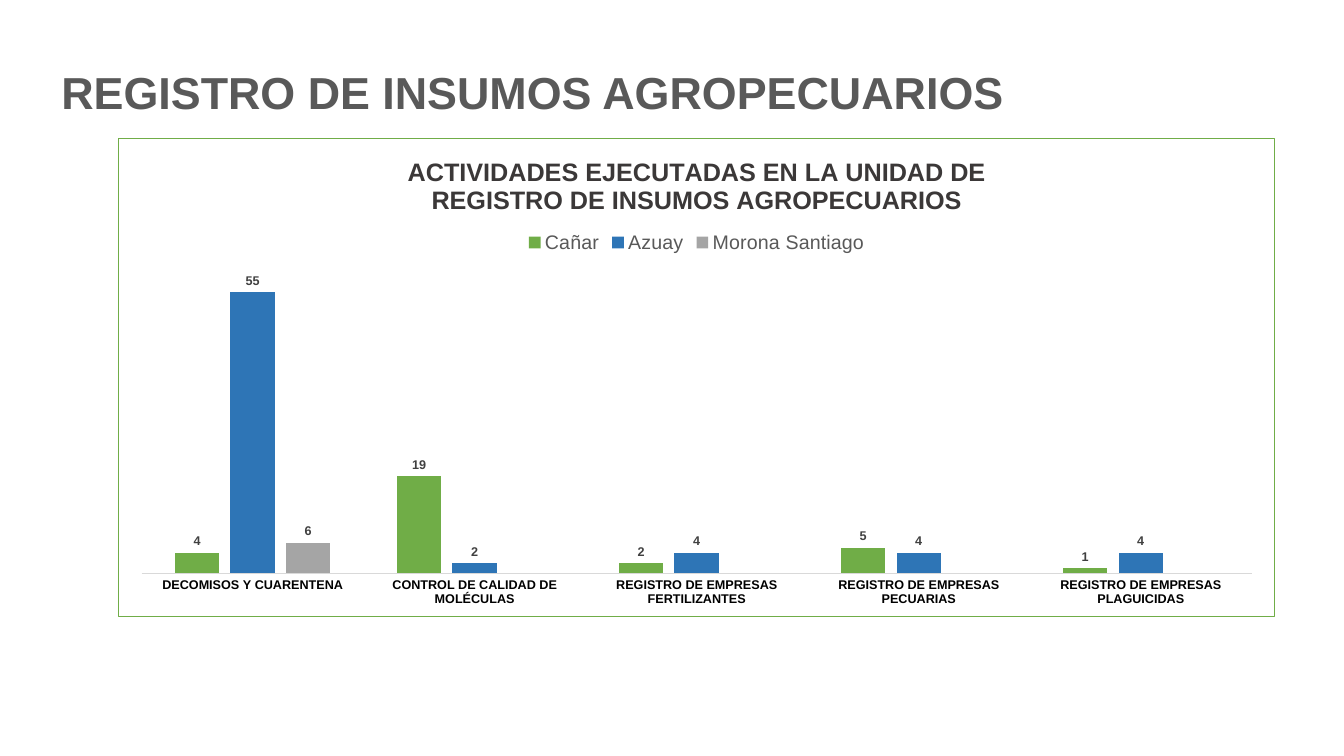
"""Build the slide on the register of farm supplies."""
import pptx
import pptx.util
import pptx.chart.data
import pptx.dml.color
import pptx.enum.chart
import pptx.oxml
from pptx.oxml import ns

Inches, Pt = pptx.util.Inches, pptx.util.Pt
RGB = pptx.dml.color.RGBColor
enum = pptx.enum.chart

GREEN = RGB(0x70, 0xAD, 0x47)
BLUE = RGB(0x2E, 0x75, 0xB6)
GREY = RGB(0xA5, 0xA5, 0xA5)
PALE = RGB(0xD9, 0xD9, 0xD9)
TEXT = RGB(0x59, 0x59, 0x59)
DARK = RGB(0x3B, 0x38, 0x38)
LABEL = RGB(0x40, 0x40, 0x40)
BLACK = RGB(0, 0, 0)
FACE = "Arial"

HEAD = "REGISTRO DE INSUMOS AGROPECUARIOS"
TITLE = ("ACTIVIDADES EJECUTADAS EN LA UNIDAD DE\n"
         "REGISTRO DE INSUMOS AGROPECUARIOS")
CATS = [
    "DECOMISOS Y CUARENTENA",
    "CONTROL DE CALIDAD DE MOLÉCULAS",
    "REGISTRO DE EMPRESAS FERTILIZANTES",
    "REGISTRO DE EMPRESAS PECUARIAS",
    "REGISTRO DE EMPRESAS PLAGUICIDAS",
]
SERIES = [
    ("Cañar", GREEN, (4, 19, 2, 5, 1)),
    ("Azuay", BLUE, (55, 2, 4, 4, 4)),
    ("Morona Santiago", GREY, (6, None, None, None, None)),
]


def style(font, size, color, bold=False):
    font.name, font.size, font.bold = FACE, Pt(size), bold
    font.color.rgb = color


def frame(chart, color):
    border = pptx.oxml.parse_xml(
        f'<c:spPr {ns.nsdecls("c", "a")}><a:noFill/><a:ln w="{Pt(0.75)}">'
        f'<a:solidFill><a:srgbClr val="{color}"/></a:solidFill></a:ln></c:spPr>')
    chart.element.find(ns.qn("c:chart")).addnext(border)


def add_head(slide):
    box = slide.shapes.add_textbox(Inches(0.51), Inches(0.59), Inches(9.61), Inches(0.64))
    box.text_frame.word_wrap = True
    para = box.text_frame.paragraphs[0]
    para.text = HEAD
    style(para.font, 32, TEXT, True)


def add_bars(slide):
    data = pptx.chart.data.CategoryChartData()
    data.categories = CATS
    for name, color, vals in SERIES:
        data.add_series(name, vals)
    chart = slide.shapes.add_chart(
        enum.XL_CHART_TYPE.COLUMN_CLUSTERED,
        Inches(1.17), Inches(1.37), Inches(11.48), Inches(4.75), data).chart
    style(chart.font, 10, BLACK)
    frame(chart, GREEN)

    chart.has_title = True
    chart.chart_title.include_in_layout = False
    chart.chart_title.text_frame.text = TITLE
    for para in chart.chart_title.text_frame.paragraphs:
        style(para.font, 18, DARK, True)

    chart.has_legend = True
    chart.legend.position = enum.XL_LEGEND_POSITION.TOP
    chart.legend.include_in_layout = False
    style(chart.legend.font, 14, TEXT)

    base = chart.category_axis
    base.major_tick_mark = base.minor_tick_mark = enum.XL_TICK_MARK.NONE
    base.format.line.color.rgb = PALE
    base.format.line.width = Pt(0.75)
    style(base.tick_labels.font, 9, BLACK, True)

    scale = chart.value_axis
    scale.minimum_scale, scale.maximum_scale = 0, 60
    scale.has_major_gridlines = False
    scale.visible = False

    plot = chart.plots[0]
    plot.gap_width, plot.overlap = 150, -25
    plot.vary_by_categories = False
    for bars, (name, color, vals) in zip(plot.series, SERIES):
        bars.format.fill.solid()
        bars.format.fill.fore_color.rgb = color
        bars.invert_if_negative = False
        tags = bars.data_labels
        tags.show_value = True
        tags.position = enum.XL_LABEL_POSITION.OUTSIDE_END
        style(tags.font, 9, LABEL, True)


def main():
    deck = pptx.Presentation()
    deck.slide_width, deck.slide_height = Inches(13.33), Inches(7.5)
    slide = deck.slides.add_slide(deck.slide_layouts[6])
    add_bars(slide)
    add_head(slide)
    deck.save("out.pptx")


if __name__ == "__main__":
    main()
